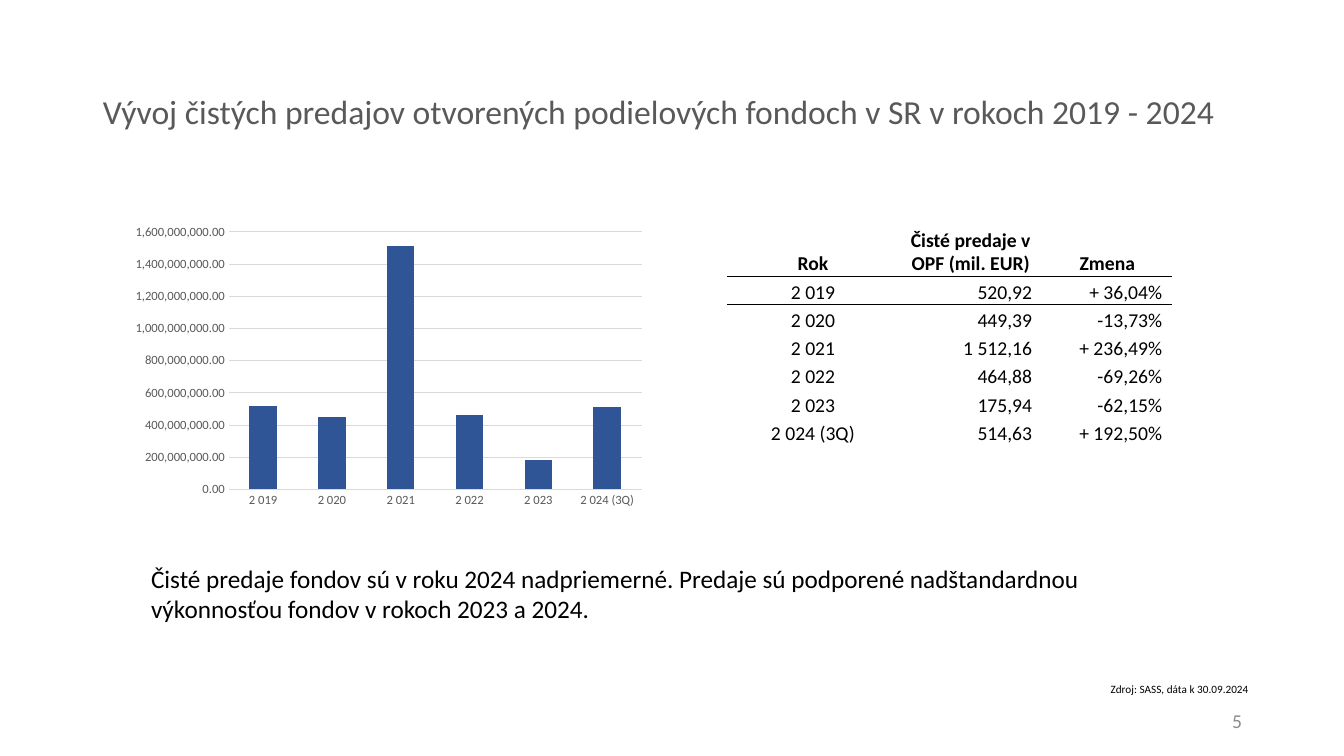
import pptx
import pptx.chart.data
import pptx.dml.color
import pptx.enum.chart
import pptx.enum.text
import pptx.oxml
import pptx.oxml.ns
import pptx.util

HUES = {"ink": "000000", "title": "595959", "page": "8C8C8C",
        "bar": "2F5597", "grid": "D9D9D9"}
FACE = "Calibri"
WIDE, HIGH = pptx.util.Inches(13.333), pptx.util.Inches(7.5)
ALIGN = pptx.enum.text.PP_ALIGN
ANCHOR = pptx.enum.text.MSO_ANCHOR
TICK = pptx.enum.chart.XL_TICK_MARK
PLAIN = "{2D5ABB26-0587-4C30-8999-92F81FD0307C}"

HEADS = ["Rok", "Čisté predaje v OPF (mil. EUR)", "Zmena"]
ROWS = [
    ["2 019", "520,92", "+ 36,04%"],
    ["2 020", "449,39", "-13,73%"],
    ["2 021", "1 512,16", "+ 236,49%"],
    ["2 022", "464,88", "-69,26%"],
    ["2 023", "175,94", "-62,15%"],
    ["2 024 (3Q)", "514,63", "+ 192,50%"],
]
SALES = [520, 450, 1510, 460, 180, 510]


def hue(name):
    return pptx.dml.color.RGBColor.from_string(HUES[name])


def area(left, top, wide, high):
    return [round(share * side / 100) for share, side in
            zip((left, top, wide, high), (WIDE, HIGH, WIDE, HIGH))]


def apply(item, form):
    for name, value in form.items():
        setattr(item, name, value)


def style(font, size, tone, bold=False):
    apply(font, {"name": FACE, "size": pptx.util.Pt(size), "bold": bold})
    font.color.rgb = hue(tone)


def write(frame, text, size, tone, align=ALIGN.LEFT, anchor=ANCHOR.TOP):
    apply(frame, {"word_wrap": True, "vertical_anchor": anchor, "text": text})
    para = frame.paragraphs[0]
    para.alignment = align
    style(para.runs[0].font, size, tone)
    return para


def add_title(slide, box, text):
    shape = slide.shapes.title
    apply(shape, dict(zip(("left", "top", "width", "height"), box)))
    para = write(shape.text_frame, text, 24, "title", anchor=ANCHOR.MIDDLE)
    para.line_spacing = 0.9


def add_text(slide, box, *form):
    write(slide.shapes.add_textbox(*box).text_frame, *form)


def add_bars(slide, box):
    data = pptx.chart.data.CategoryChartData(number_format="#,##0.00")
    data.categories = [row[0] for row in ROWS]
    data.add_series("Series 1", [sale * 10**6 for sale in SALES])
    kind = pptx.enum.chart.XL_CHART_TYPE.COLUMN_CLUSTERED
    chart = slide.shapes.add_chart(kind, *box, data).chart
    apply(chart, {"has_legend": False, "has_title": False})
    style(chart.font, 10, "ink")
    plot = chart.plots[0]
    apply(plot, {"gap_width": 150, "vary_by_categories": False})
    fill = plot.series[0].format.fill
    fill.solid()
    fill.fore_color.rgb = hue("bar")
    for axis in (chart.category_axis, chart.value_axis):
        apply(axis, {"major_tick_mark": TICK.NONE, "minor_tick_mark": TICK.NONE})
        style(axis.tick_labels.font, 9, "title")
        axis.format.line.fill.background()
    axis = chart.value_axis
    apply(axis, {"has_major_gridlines": True, "minimum_scale": 0,
                 "maximum_scale": 1600 * 10**6, "major_unit": 200 * 10**6})
    apply(axis.tick_labels, {"number_format": "#,##0.00",
                             "number_format_is_linked": False})
    line = axis.major_gridlines.format.line
    line.width = pptx.util.Pt(0.75)
    line.color.rgb = hue("grid")


def add_rule(cell, side):
    space = pptx.oxml.ns.nsdecls("a")
    rule = pptx.oxml.parse_xml(
        f'<a:{side} {space} w="6350"><a:solidFill>'
        f'<a:srgbClr val="{HUES["ink"]}"/></a:solidFill></a:{side}>')
    cell._tc.get_or_add_tcPr().insert(0, rule)


def add_grid(slide, box):
    table = slide.shapes.add_table(len(ROWS) + 1, len(HEADS), *box).table
    apply(table, {"first_row": False, "horz_banding": False})
    table._tbl.tblPr.find(pptx.oxml.ns.qn("a:tableStyleId")).text = PLAIN
    for col, part in zip(table.columns, (171, 142, 129)):
        col.width = round(box[2] * part / 442)
    for row, part in zip(table.rows, [55] + [28] * len(ROWS)):
        row.height = round(box[3] * part / 223)
    for r, texts in enumerate([HEADS] + ROWS):
        for c, text in enumerate(texts):
            cell = table.cell(r, c)
            right = r > 0 and c > 0
            apply(cell, {"margin_left": 0, "margin_top": 0, "margin_bottom": 0,
                         "margin_right": pptx.util.Inches(0.1 if right else 0),
                         "vertical_anchor": ANCHOR.BOTTOM, "text": text})
            para = cell.text_frame.paragraphs[0]
            para.alignment = ALIGN.RIGHT if right else ALIGN.CENTER
            style(para.runs[0].font, 14, "ink", r == 0)
            cell.fill.background()
            if r < 2:
                add_rule(cell, ("lnB", "lnT")[r])


def main():
    deck = pptx.Presentation()
    apply(deck, {"slide_width": WIDE, "slide_height": HIGH})
    slide = deck.slides.add_slide(deck.slide_layouts[5])
    add_title(slide, area(6.9, 5.33, 89.55, 19.33),
              "Vývoj čistých predajov otvorených podielových fondoch "
              "v SR v rokoch 2019 - 2024")
    add_text(slide, area(70.65, 92.67, 22.5, 5.33), "5", 14, "page",
             ALIGN.RIGHT, ANCHOR.MIDDLE)
    add_text(slide, area(81.9, 89.6, 12.15, 3.2),
             "Zdroj: SASS, dáta k 30.09.2024", 8, "ink")
    add_text(slide, area(10.5, 73.87, 78.97, 9.47),
             "Čisté predaje fondov sú v roku 2024 nadpriemerné. Predaje sú "
             "podporené nadštandardnou výkonnosťou fondov v rokoch 2023 a 2024.",
             18, "ink")
    add_bars(slide, area(9.3, 28.93, 39.22, 39.07))
    add_grid(slide, area(54.08, 29.2, 33.15, 29.73))
    deck.save("out.pptx")


if __name__ == "__main__":
    main()
